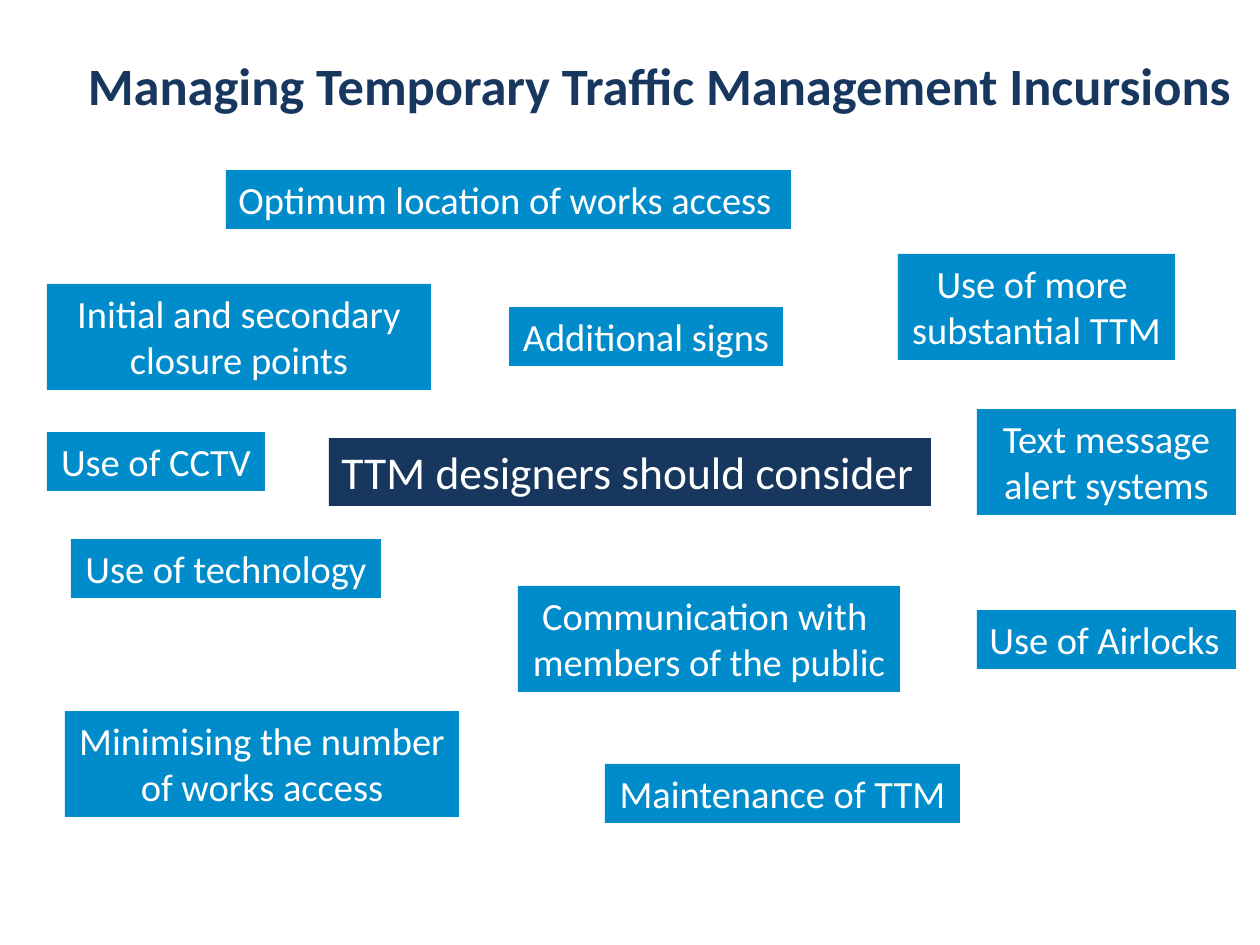
from pptx import Presentation
from pptx.dml.color import RGBColor
from pptx.enum.shapes import MSO_SHAPE
from pptx.enum.text import MSO_ANCHOR, MSO_AUTO_SIZE, PP_ALIGN
from pptx.util import Emu, Pt

RECTANGLE = MSO_SHAPE.RECTANGLE
LEFT, CENTER, RIGHT = PP_ALIGN.LEFT, PP_ALIGN.CENTER, PP_ALIGN.RIGHT
TOP, MIDDLE = MSO_ANCHOR.TOP, MSO_ANCHOR.MIDDLE
GROW = MSO_AUTO_SIZE.SHAPE_TO_FIT_TEXT

EMU_PER_PX = 914400 / 126
SLIDE_SIZE = (1260, 945)
COLORS = {"navy": "17375E", "blue": "008BCB", "white": "FFFFFF"}
FONT = "Calibri"
ONE_LINE, TWO_LINES = 59, 106

TITLE = "Managing Temporary Traffic Management Incursions "
TITLE_BOX = (54, 43, 1202, 82)
TOPIC = "TTM designers should consider"
TOPIC_BOX = (329, 438, 602, 68)

# lines, left, top, width, height, alignment, wrapped
MEASURES = [
    (["Optimum location of works access"], 226, 170, 565, ONE_LINE, LEFT, False),
    (["Use of Airlocks"], 977, 610, 259, ONE_LINE, LEFT, False),
    (["Minimising the number", "of works access"], 65, 711, 394, TWO_LINES, CENTER, False),
    (["Use of more ", "substantial TTM"], 898, 254, 277, TWO_LINES, CENTER, False),
    (["Use of CCTV"], 47, 432, 218, ONE_LINE, CENTER, False),
    (["Maintenance of TTM"], 605, 764, 355, ONE_LINE, CENTER, False),
    (["Additional signs"], 509, 307, 274, ONE_LINE, CENTER, False),
    (["Use of technology"], 71, 539, 310, ONE_LINE, CENTER, False),
    (["Communication with ", "members of the public"], 518, 586, 382, TWO_LINES, CENTER, False),
    (["Text message alert systems"], 977, 409, 259, TWO_LINES, CENTER, True),
    (["Initial and secondary closure points"], 47, 284, 384, TWO_LINES, CENTER, True),
]


def px(*lengths):
    return [Emu(round(length * EMU_PER_PX)) for length in lengths]


def rgb(name):
    return RGBColor.from_string(COLORS[name])


def write(frame, lines, size, color, alignment, bold=False):
    frame.text = "\n".join(lines)
    font_format = {"name": FONT, "size": Pt(size), "bold": bold}
    for paragraph in frame.paragraphs:
        paragraph.alignment = alignment
        for run in paragraph.runs:
            for attribute, value in font_format.items():
                setattr(run.font, attribute, value)
            run.font.color.rgb = rgb(color)


def add_label(slide, lines, box, fill, size, alignment, wrapped):
    label = slide.shapes.add_shape(RECTANGLE, *px(*box))
    label.shadow.inherit = False
    label.fill.solid()
    label.fill.fore_color.rgb = rgb(fill)
    label.line.fill.background()
    frame = label.text_frame
    write(frame, lines, size, "white", alignment)
    frame.vertical_anchor = TOP
    frame.word_wrap = wrapped
    frame.auto_size = GROW


def main():
    presentation = Presentation()
    presentation.slide_width, presentation.slide_height = px(*SLIDE_SIZE)
    slide = presentation.slides.add_slide(presentation.slide_layouts[6])

    title = slide.shapes.add_textbox(*px(*TITLE_BOX)).text_frame
    title.word_wrap = True
    title.vertical_anchor = MIDDLE
    write(title, [TITLE], 30, "navy", RIGHT, bold=True)

    add_label(slide, [TOPIC], TOPIC_BOX, "navy", 26, LEFT, False)
    for lines, left, top, width, height, alignment, wrapped in MEASURES:
        add_label(slide, lines, (left, top, width, height), "blue", 22, alignment, wrapped)

    presentation.save("out.pptx")


if __name__ == "__main__":
    main()
